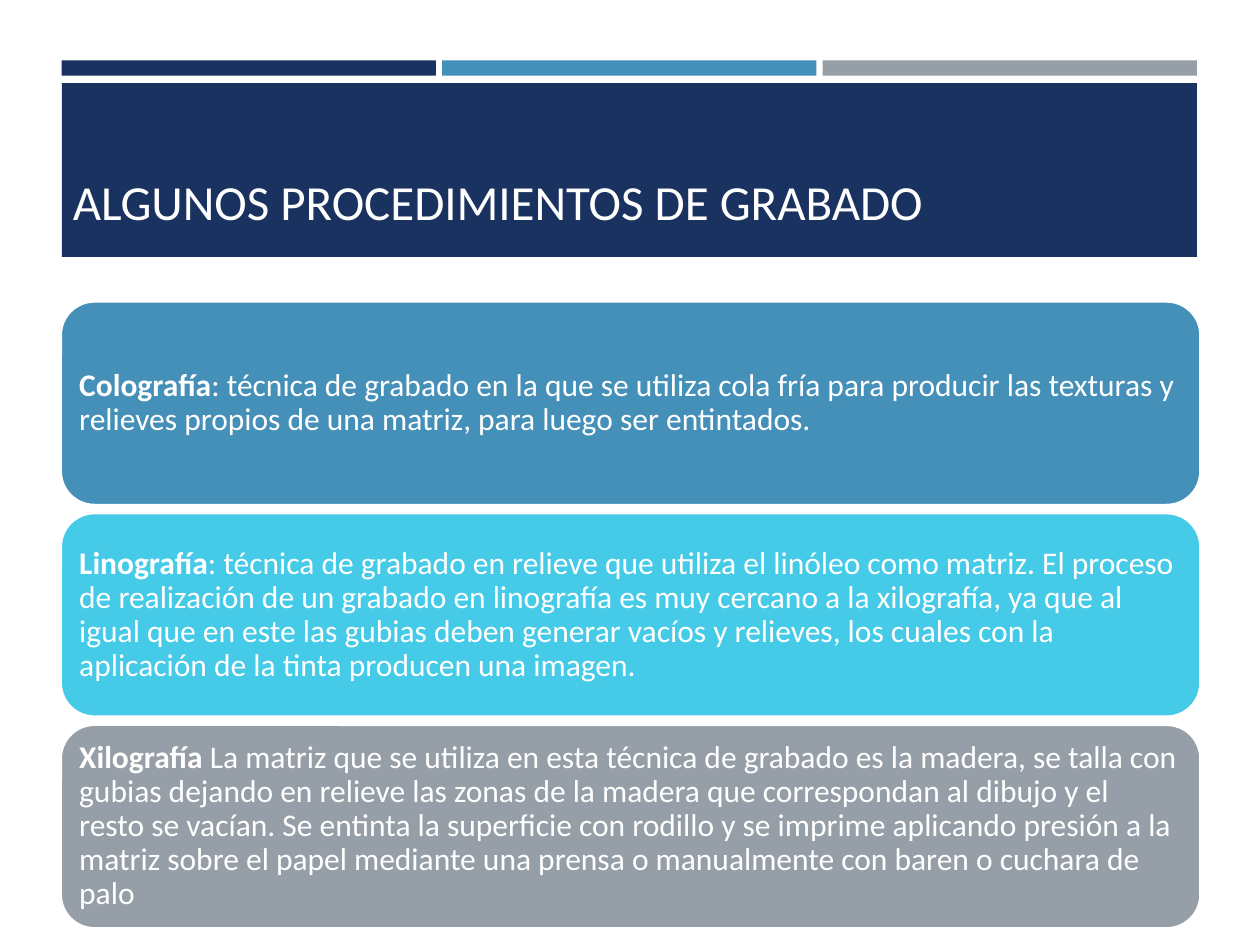
from pptx import Presentation
from pptx.dml.color import RGBColor
from pptx.enum.shapes import MSO_SHAPE as SHAPE
from pptx.enum.text import MSO_ANCHOR as ANCHOR, PP_ALIGN as ALIGN
from pptx.util import Inches, Pt

COLORS = {
    "navy": "1A3260",
    "blue": "4590B8",
    "cyan": "45CBE8",
    "gray": "969FA7",
    "white": "FFFFFF",
    "title": "FFFEFF",
}

prs = Presentation()
prs.slide_width, prs.slide_height = Inches(10), Inches(7.5)
s = prs.slides.add_slide(prs.slide_layouts[6])


def add_block(kind, x, y, w, h, color, outline=None):
    sp = s.shapes.add_shape(kind, Inches(x), Inches(y), Inches(w), Inches(h))
    sp.shadow.inherit = False
    sp.fill.solid()
    sp.fill.fore_color.rgb = RGBColor.from_string(COLORS[color])
    if outline:
        sp.line.color.rgb = RGBColor.from_string(COLORS[outline])
        sp.line.width = Pt(1.75)
    else:
        sp.line.fill.background()
    return sp


def write(sp, text, bold="", size=18, color="white", anchor=ANCHOR.MIDDLE,
          spacing=None, margin=None):
    """Fill a shape with one left-aligned paragraph, led by an optional bold term."""
    tf = sp.text_frame
    tf.word_wrap = True
    tf.vertical_anchor = anchor
    if margin is not None:
        tf.margin_left = tf.margin_right = Inches(margin)
        tf.margin_top = tf.margin_bottom = Inches(margin)
    p = tf.paragraphs[0]
    p.alignment = ALIGN.LEFT
    p.line_spacing = spacing
    for part, is_bold in ((bold, True), (text, False)):
        if part:
            r = p.add_run()
            r.text = part
            r.font.name = "Calibri"
            r.font.size = Pt(size)
            r.font.bold = is_bold
            r.font.color.rgb = RGBColor.from_string(COLORS[color])


# Header: three thin bars above the title band
for i, color in enumerate(("navy", "blue", "gray")):
    add_block(SHAPE.RECTANGLE, 0.49 + i * 3.02, 0.48, 2.97, 0.12, color)
add_block(SHAPE.RECTANGLE, 0.49, 0.66, 9.01, 1.38, "navy")

title = s.shapes.add_textbox(Inches(0.48), Inches(0.77), Inches(9.05), Inches(1.11))
write(title, "ALGUNOS PROCEDIMIENTOS DE GRABADO", size=28, color="title",
      anchor=ANCHOR.BOTTOM)

# One card for each technique
techniques = [
    ("blue", "Colografía",
     ": técnica de grabado en la que se utiliza cola fría para producir las "
     "texturas y relieves propios de una matriz, para luego ser entintados."),
    ("cyan", "Linografía",
     ": técnica de grabado en relieve que utiliza el linóleo como matriz. El "
     "proceso de realización de un grabado en linografía es muy cercano a la "
     "xilografía, ya que al igual que en este las gubias deben generar vacíos y "
     "relieves, los cuales con la aplicación de la tinta producen una imagen."),
    ("gray", "Xilografía ",
     "La matriz que se utiliza en esta técnica de grabado es la madera, se talla "
     "con gubias dejando en relieve las zonas de la madera que correspondan al "
     "dibujo y el resto se vacían. Se entinta la superficie con rodillo y se "
     "imprime aplicando presión a la matriz sobre el papel mediante una prensa o "
     "manualmente con baren o cuchara de palo"),
]
for i, (color, term, definition) in enumerate(techniques):
    card = add_block(SHAPE.ROUNDED_RECTANGLE, 0.48, 2.39 + i * 1.68, 9.05, 1.62,
                     color, outline="white")
    write(card, definition, bold=term, spacing=0.9, margin=0.07)

prs.save("out.pptx")
